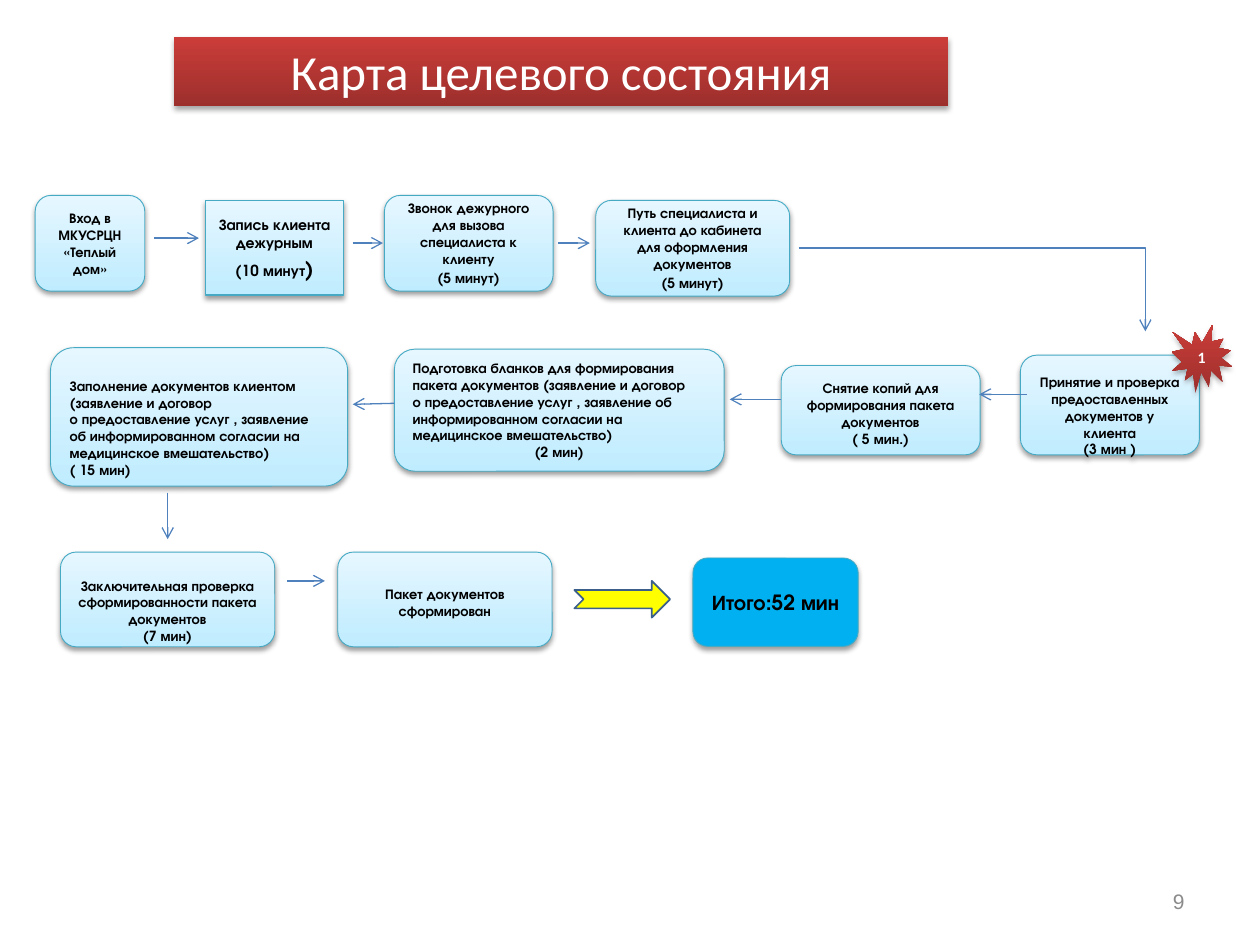
from lxml import etree
from pptx import Presentation
from pptx.dml.color import RGBColor
from pptx.enum.shapes import MSO_CONNECTOR, MSO_SHAPE
from pptx.enum.text import MSO_ANCHOR, PP_ALIGN
from pptx.oxml.ns import qn
from pptx.util import Cm, Pt

RECT, ROUNDED = MSO_SHAPE.RECTANGLE, MSO_SHAPE.ROUNDED_RECTANGLE
NOTCHED_ARROW, BURST = MSO_SHAPE.NOTCHED_RIGHT_ARROW, MSO_SHAPE.EXPLOSION1
STRAIGHT, ELBOW = MSO_CONNECTOR.STRAIGHT, MSO_CONNECTOR.ELBOW
LEFT, CENTER, RIGHT = PP_ALIGN.LEFT, PP_ALIGN.CENTER, PP_ALIGN.RIGHT
TOP, MIDDLE = MSO_ANCHOR.TOP, MSO_ANCHOR.MIDDLE

BLACK = RGBColor(0x00, 0x00, 0x00)
WHITE = RGBColor(0xFF, 0xFF, 0xFF)
GRAY = RGBColor(0x8B, 0x8B, 0x8B)
YELLOW = RGBColor(0xFF, 0xFF, 0x00)
SKY = RGBColor(0x00, 0xB0, 0xF0)
TEAL = RGBColor(0x46, 0xAA, 0xC4)
NAVY = RGBColor(0x3A, 0x5F, 0x8B)
BLUE = RGBColor(0x4F, 0x81, 0xBD)
RED = (RGBColor(0x9C, 0x2F, 0x2C), RGBColor(0xCB, 0x3D, 0x39))
ICE = (RGBColor(0xBF, 0xEC, 0xFF), RGBColor(0xE6, 0xF7, 0xFF))

STEP_FONT, TITLE_FONT, NUMBER_FONT = "TeX Gyre Adventor", "Calibri", "Arial"

# Places are left, top, width, height in cm. A paragraph is a string
# or a list of (text, size) runs.
TITLE = ("Карта целевого состояния", (3.51, 0.74, 15.6, 1.4))
PAGE_NUMBER = ("9", (18.21, 17.65, 5.92, 1.02))
PROBLEM_MARK = ("1", (23.62, 6.55, 1.22, 1.37))
RESULT_ARROW = (11.58, 11.71, 1.93, 0.74)

FORMS = "о предоставление услуг , заявление об информированном согласии на медицинское вмешательство)"
STEPS = [
    ((0.71, 3.94, 2.21, 1.93), ["Вход в МКУСРЦН «Теплый дом»"], {}),
    ((4.14, 4.04, 2.79, 1.91),
     ["Запись клиента дежурным", [("(10 минут", 8.7), (")", 11.6)]],
     dict(kind=RECT, line_width=0.75, size=8.7, gap=2.4, side=0.15)),
    ((7.75, 3.94, 3.4, 1.93),
     ["Звонок дежурного для вызова специалиста к клиенту", "(5 минут)"], dict(gap=1.6)),
    ((12.01, 4.04, 3.91, 1.93),
     ["Путь специалиста и клиента до кабинета для оформления документов", "(5 минут)"],
     dict(gap=1.6)),
    ((20.57, 7.16, 3.61, 2.01),
     ["Принятие и проверка предоставленных документов у клиента", "(3 мин )"],
     dict(anchor=TOP, top=0.28)),
    ((15.75, 7.37, 4.01, 1.8),
     ["Снятие копий для формирования пакета документов", "( 5 мин.)"],
     dict(anchor=TOP, top=0.2)),
    ((7.95, 7.04, 6.65, 2.46),
     ["Подготовка бланков для формирования пакета документов (заявление и договор",
      FORMS, "(2 мин)"], dict(align=LEFT, last_align=CENTER)),
    ((1.02, 7.01, 5.99, 2.79),
     ["Заполнение документов клиентом (заявление и договор", FORMS, "( 15 мин)"],
     dict(align=LEFT, anchor=TOP, top=0.46)),
    ((1.22, 11.13, 4.32, 1.91),
     ["Заключительная проверка сформированности пакета документов", "(7 мин)"],
     dict(anchor=TOP, top=0.41)),
    ((6.81, 11.13, 4.32, 1.91), ["Пакет документов сформирован"],
     dict(anchor=TOP, top=0.59)),
    ((13.97, 11.25, 3.33, 1.78), ["Итого:52 мин"],
     dict(fill=SKY, size=12, side=0.15)),
]

# Start x, y and end x, y in cm
STRAIGHT_ARROWS = [
    (3.1, 4.8, 4.01, 4.8), (7.11, 4.9, 7.72, 4.9), (11.25, 4.9, 11.89, 4.9),
    (20.7, 7.95, 19.74, 7.95), (15.75, 8.05, 14.71, 8.05), (7.95, 8.13, 7.11, 8.15),
    (3.38, 9.93, 3.38, 10.87), (5.79, 11.71, 6.55, 11.71),
]
ROW_TURN = (16.1, 5.0, 23.09, 6.68)


def write(shape, paragraphs, *, size=8, font=STEP_FONT, color=BLACK, bold=True,
          align=CENTER, last_align=None, anchor=MIDDLE, gap=0, side=0.25, top=0.13):
    frame = shape.text_frame
    frame.word_wrap = True
    frame.vertical_anchor = anchor
    frame.margin_left = frame.margin_right = Cm(side)
    frame.margin_top, frame.margin_bottom = Cm(top), Cm(0.13)
    for index, content in enumerate(paragraphs):
        paragraph = frame.add_paragraph() if index else frame.paragraphs[0]
        paragraph.alignment = align
        if index:
            paragraph.space_before = Pt(gap)
        runs = [(content, size)] if isinstance(content, str) else content
        for text, run_size in runs:
            run = paragraph.add_run()
            run.text = text
            run.font.size, run.font.name, run.font.bold = Pt(run_size), font, bold
            run.font.color.rgb = color
    if last_align is not None:
        frame.paragraphs[-1].alignment = last_align


def add_block(slide, kind, place, fill, line=None, line_width=0.5, shadow=None):
    """Add a shape; a pair of fill colours runs from bottom to top, shadow is an opacity in %."""
    block = slide.shapes.add_shape(kind, *map(Cm, place))
    if isinstance(fill, RGBColor):
        block.fill.solid()
        block.fill.fore_color.rgb = fill
    else:
        block.fill.gradient()
        block.fill.gradient_angle = 90
        for stop, color in zip(block.fill.gradient_stops, fill):
            stop.color.rgb = color
    if line is None:
        block.line.fill.background()
    else:
        block.line.color.rgb = line
        block.line.width = Pt(line_width)
    block.shadow.inherit = False
    if shadow:
        effects = block._element.spPr.find(qn("a:effectLst"))
        outer = etree.SubElement(effects, qn("a:outerShdw"), blurRad=str(Pt(3.1)),
                                 dist=str(Pt(1.7)), dir="5400000", rotWithShape="0")
        black = etree.SubElement(outer, qn("a:srgbClr"), val="000000")
        etree.SubElement(black, qn("a:alpha"), val=str(shadow * 1000))
    return block


def add_arrow(slide, ends, kind=STRAIGHT):
    arrow = slide.shapes.add_connector(kind, *map(Cm, ends))
    arrow.line.color.rgb = BLUE
    arrow.line.width = Pt(0.75)
    properties = arrow._element.spPr
    etree.SubElement(properties.find(qn("a:ln")), qn("a:tailEnd"), type="arrow")
    etree.SubElement(properties, qn("a:effectLst"))
    if kind == ELBOW:
        guides = properties.find(qn("a:prstGeom")).find(qn("a:avLst"))
        etree.SubElement(guides, qn("a:gd"), name="adj1", fmla="val 100000")


def add_step(slide, place, paragraphs, kind=ROUNDED, fill=ICE, line_width=0.5, **text_format):
    step = add_block(slide, kind, place, fill, TEAL, line_width, shadow=38)
    write(step, paragraphs, **text_format)


def main():
    deck = Presentation()
    deck.slide_width, deck.slide_height = Cm(25.4), Cm(19.05)
    slide = deck.slides.add_slide(deck.slide_layouts[6])

    text, place = TITLE
    write(add_block(slide, RECT, place, RED, shadow=35), [text],
          size=28, font=TITLE_FONT, color=WHITE, bold=False)
    for place, paragraphs, options in STEPS:
        add_step(slide, place, paragraphs, **options)
    add_block(slide, NOTCHED_ARROW, RESULT_ARROW, YELLOW, NAVY, 1)
    for ends in STRAIGHT_ARROWS:
        add_arrow(slide, ends)
    add_arrow(slide, ROW_TURN, ELBOW)

    text, place = PROBLEM_MARK
    write(add_block(slide, BURST, place, RED, shadow=35), [text],
          size=9, font=TITLE_FONT, color=WHITE, side=0)
    text, place = PAGE_NUMBER
    write(slide.shapes.add_textbox(*map(Cm, place)), [text],
          size=12, font=NUMBER_FONT, color=GRAY, bold=False, align=RIGHT)
    deck.save("out.pptx")


if __name__ == "__main__":
    main()
